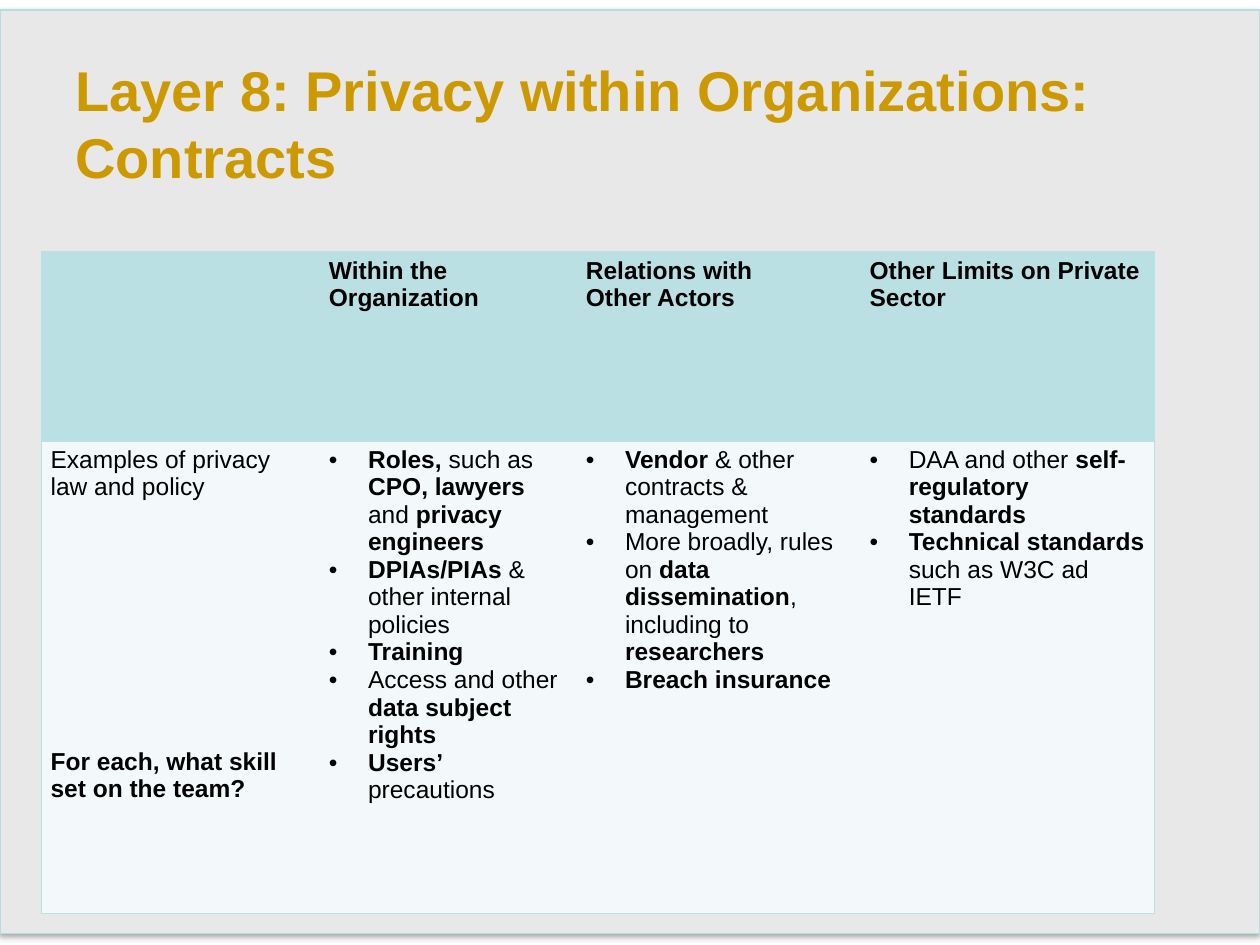
from lxml.etree import SubElement
from pptx import Presentation
from pptx.dml.color import RGBColor
from pptx.enum.shapes import MSO_SHAPE
from pptx.enum.text import MSO_ANCHOR
from pptx.oxml import parse_xml
from pptx.oxml.ns import nsdecls, qn
from pptx.util import Cm, Pt

COLORS = {
    "panel": "E8E8E8",
    "panel line": "B6DCDF",
    "title": "CC9900",
    "header": "BBE0E3",
    "body": "F3F9FA",
    "border": "BBE0E3",
    "text": "000000",
}
FONT = "Arial"
COLUMN_WIDTHS = [5.61, 5.18, 5.72, 5.92]
ROW_HEIGHTS = [3.81, 9.53]
QUESTION_GAP = Pt(141)

# Text between ** marks is bold
HEADERS = [
    [],
    ["**Within the**", "**Organization**"],
    ["**Relations with**", "**Other Actors**"],
    ["**Other Limits on Private Sector**"],
]
EXAMPLES = [
    ["Examples of privacy law and policy", "**For each, what skill set on the team?**"],
    [
        "**Roles, **such as **CPO, lawyers **and** privacy engineers**",
        "**DPIAs/PIAs **& other internal policies",
        "**Training**",
        "Access and other **data subject rights**",
        "**Users’ **precautions",
    ],
    [
        "**Vendor** & other contracts & management",
        "More broadly, rules on **data dissemination**, including to **researchers**",
        "**Breach insurance**",
    ],
    [
        "DAA and other **self-regulatory standards**",
        "**Technical standards **such as W3C ad IETF",
    ],
]


def color(name):
    return RGBColor.from_string(COLORS[name])


def style_run(run, size, color_name, bold):
    run.font.name = FONT
    run.font.size = Pt(size)
    run.font.bold = bold
    run.font.color.rgb = color(color_name)


def add_panel(slide, left, top, width, height):
    panel = slide.shapes.add_shape(MSO_SHAPE.RECTANGLE, left, top, width, height)
    panel.fill.solid()
    panel.fill.fore_color.rgb = color("panel")
    panel.line.color.rgb = color("panel line")
    panel.line.width = Pt(0.75)
    panel.shadow.inherit = False
    # Soft shadow straight below
    effects = panel._element.spPr.find(qn("a:effectLst"))
    effects.append(parse_xml(
        f'<a:outerShdw {nsdecls("a")} blurRad="{Pt(3.1)}" dist="{Pt(1.8)}" '
        'dir="5400000" rotWithShape="0"><a:srgbClr val="000000">'
        '<a:alpha val="35000"/></a:srgbClr></a:outerShdw>'))


def add_title(slide, left, top, width, height):
    text_frame = slide.shapes.add_textbox(left, top, width, height).text_frame
    text_frame.word_wrap = True
    text_frame.vertical_anchor = MSO_ANCHOR.MIDDLE
    text_frame.text = "Layer 8: Privacy within Organizations: Contracts"
    style_run(text_frame.paragraphs[0].runs[0], 32, "title", True)


def add_bullet(paragraph):
    properties = paragraph._p.get_or_add_pPr()
    properties.set("marL", str(Cm(0.79)))
    properties.set("indent", str(-Cm(0.79)))
    SubElement(properties, qn("a:buFont"), typeface=FONT)
    SubElement(properties, qn("a:buChar"), char="•")


def set_borders(cell, sides):
    properties = cell._tc.get_or_add_tcPr()
    for index, side in enumerate("LRTB"):
        if side in sides:
            paint = f'<a:solidFill><a:srgbClr val="{COLORS["border"]}"/></a:solidFill>'
        else:
            paint = "<a:noFill/>"
        properties.insert(index, parse_xml(
            f'<a:ln{side} {nsdecls("a")} w="{Pt(1)}">{paint}</a:ln{side}>'))


def fill_cell(cell, lines, fill, bulleted):
    cell.margin_left = cell.margin_right = Cm(0.18)
    cell.margin_top = cell.margin_bottom = Cm(0.1)
    cell.fill.solid()
    cell.fill.fore_color.rgb = color(fill)
    for index, line in enumerate(lines):
        text_frame = cell.text_frame
        paragraph = text_frame.add_paragraph() if index else text_frame.paragraphs[0]
        if bulleted:
            add_bullet(paragraph)
        for part, text in enumerate(line.split("**")):
            if text:
                run = paragraph.add_run()
                run.text = text
                style_run(run, 14, "text", part % 2 == 1)


def add_contracts_table(slide, left, top, width, height):
    rows = [HEADERS, EXAMPLES]
    last = len(COLUMN_WIDTHS) - 1
    table = slide.shapes.add_table(
        len(rows), len(COLUMN_WIDTHS), left, top, width, height).table
    table.first_row = table.horz_banding = False
    for column, column_width in zip(table.columns, COLUMN_WIDTHS):
        column.width = Cm(column_width)
    for row, row_height in zip(table.rows, ROW_HEIGHTS):
        row.height = Cm(row_height)
    for row_index, (cells, fill) in enumerate(zip(rows, ["header", "body"])):
        for column_index, lines in enumerate(cells):
            cell = table.cell(row_index, column_index)
            fill_cell(cell, lines, fill, row_index > 0 and column_index > 0)
            sides = "TB" + "L" * (column_index == 0) + "R" * (column_index == last)
            set_borders(cell, sides)
    # The question sits well below the row label
    table.cell(1, 0).text_frame.paragraphs[1].space_before = QUESTION_GAP


def main():
    presentation = Presentation()
    presentation.slide_width = Cm(25.4)
    presentation.slide_height = Cm(19.05)
    slide = presentation.slides.add_slide(presentation.slide_layouts[6])
    add_panel(slide, Cm(0), Cm(0.2), Cm(25.4), Cm(18.62))
    add_title(slide, Cm(1.27), Cm(1), Cm(22.86), Cm(2.94))
    add_contracts_table(slide, Cm(0.84), Cm(5.08),
                        Cm(sum(COLUMN_WIDTHS)), Cm(sum(ROW_HEIGHTS)))
    presentation.save("out.pptx")


if __name__ == "__main__":
    main()
